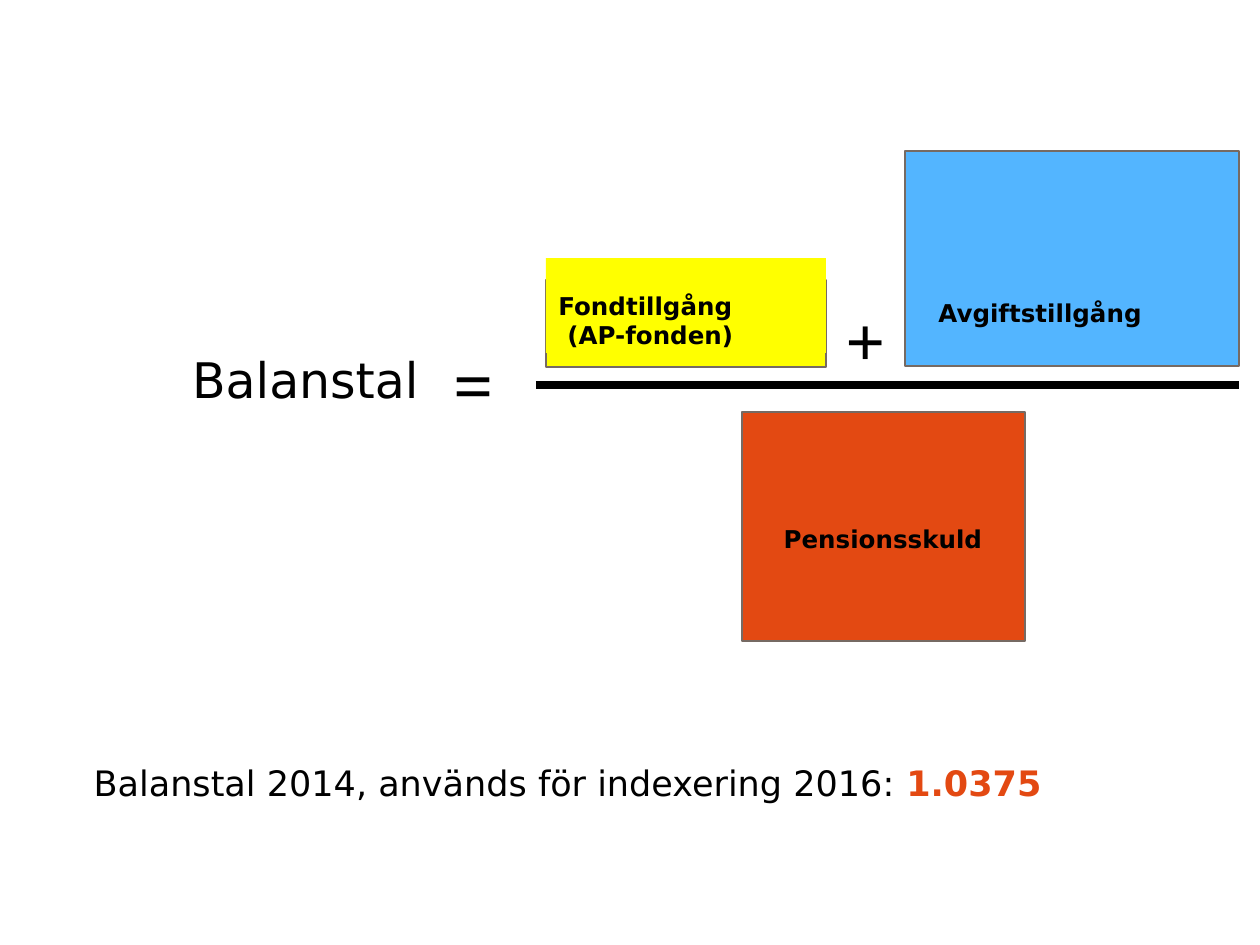
import pptx
import pptx.util
import pptx.dml.color
import pptx.enum.shapes
import pptx.enum.text
import pptx.oxml.ns
from lxml import etree

SCALE = 914400 / 126  # EMU per px
ALIGN = pptx.enum.text.PP_ALIGN
ANCHOR = pptx.enum.text.MSO_ANCHOR
FIT = pptx.enum.text.MSO_AUTO_SIZE
RECT = pptx.enum.shapes.MSO_SHAPE.RECTANGLE
Pt = pptx.util.Pt


def px(*vals):
    return [pptx.util.Emu(round(v * SCALE)) for v in vals]


def color(code):
    return pptx.dml.color.RGBColor.from_string(code)


prs = pptx.Presentation()
prs.slide_width, prs.slide_height = px(1260, 945)
slide = prs.slides.add_slide(prs.slide_layouts[5])
shapes = slide.shapes

# Fraction bar
bar = shapes.add_connector(pptx.enum.shapes.MSO_CONNECTOR.STRAIGHT,
                           *px(536, 385, 1239, 385))
bar.line.color.rgb = color("000000")
bar.line.width = Pt(4.5)
etree.SubElement(bar._element.spPr, pptx.oxml.ns.qn("a:effectLst"))

# Filled blocks: the fund block is a pair, grouped
fund = shapes.add_group_shape()
blocks = [
    (shapes, (742, 412, 283, 229), "E34912", True),
    (shapes, (905, 151, 334, 215), "53B5FF", True),
    (fund.shapes, (546, 280, 280, 87), "FFFF00", True),
    (fund.shapes, (546, 258, 280, 95), "FFFF00", False),
]
for home, place, fill, edge in blocks:
    block = home.add_shape(RECT, *px(*place))
    block.shadow.inherit = False
    block.fill.solid()
    block.fill.fore_color.rgb = color(fill)
    if edge:
        block.line.color.rgb = color("766A63")
        block.line.width = Pt(1)
    else:
        block.line.fill.background()

# Fund label, on the last block
frame = block.text_frame
frame.vertical_anchor = ANCHOR.MIDDLE
frame.margin_top, frame.margin_bottom = px(29, 0)
frame.text = "Fondtillgång\n(AP-fonden)"
for para in frame.paragraphs:
    para.alignment = ALIGN.LEFT
    para.font.name = "DejaVu Sans"
    para.font.size = Pt(14)
    para.font.bold = True
    para.font.color.rgb = color("000000")
frame.paragraphs[1]._p.get_or_add_pPr().set("marL", str(px(9)[0]))

# Labels and signs: text, place, font, size, bold, align, spacing, anchor
SANS, SERIF = "DejaVu Sans", "Times New Roman"
labels = [
    ("Balanstal", (77, 343, 354, 72), SANS, 28, False, ALIGN.RIGHT, None, ANCHOR.TOP),
    ("Pensionsskuld", (743, 472, 280, 110), SANS, 14, True, ALIGN.CENTER, 30, ANCHOR.MIDDLE),
    ("Avgiftstillgång", (926, 244, 256, 115), SANS, 14, True, ALIGN.LEFT, 30, ANCHOR.MIDDLE),
    ("+", (833, 290, 66, 97), SERIF, 40, True, ALIGN.LEFT, None, ANCHOR.TOP),
    ("=", (441, 334, 66, 97), SERIF, 40, True, ALIGN.LEFT, None, ANCHOR.TOP),
]
for text, place, face, size, bold, align, space, anchor in labels:
    frame = shapes.add_textbox(*px(*place)).text_frame
    frame.word_wrap = face == SANS
    frame.vertical_anchor = anchor
    frame.text = text
    para = frame.paragraphs[0]
    para.alignment = align
    if space:
        para.line_spacing = Pt(space)
    para.font.name = face
    para.font.size = Pt(size)
    para.font.bold = bold
    para.font.color.rgb = color("000000")

# Title with the result
title = shapes.title
title.left, title.top, title.width, title.height = px(81, 750, 1070, 60)
frame = title.text_frame
frame.auto_size = FIT.NONE
frame.vertical_anchor = ANCHOR.BOTTOM
para = frame.paragraphs[0]
para.alignment = ALIGN.LEFT
para.line_spacing = Pt(30)
for text, code, bold in [
    ("Balanstal 2014, används för indexering 2016: ", "000000", False),
    ("1.0375", "E34912", True),
]:
    run = para.add_run()
    run.text = text
    run.font.name = SANS
    run.font.size = Pt(20)
    run.font.bold = bold
    run.font.color.rgb = color(code)

prs.save("out.pptx")
